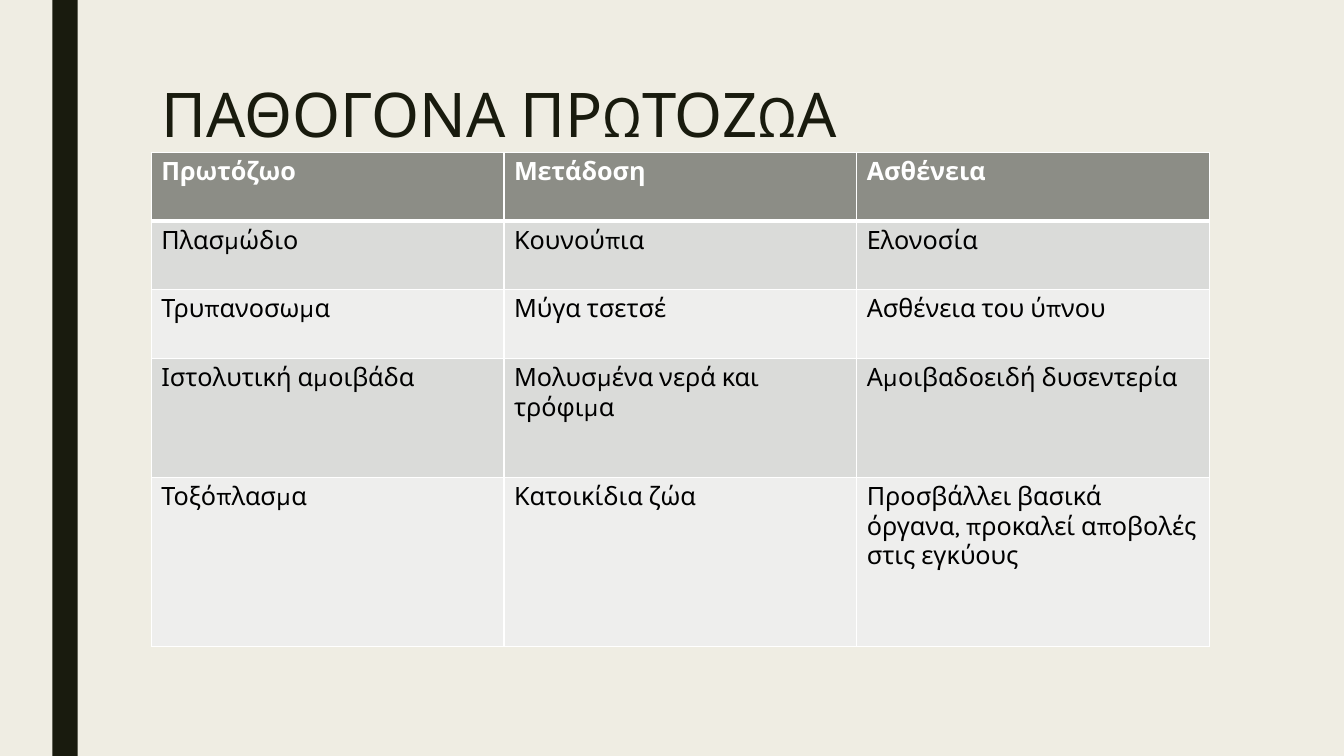
from lxml.etree import SubElement
from pptx import Presentation
from pptx.dml.color import RGBColor
from pptx.enum.shapes import MSO_SHAPE as Shape
from pptx.enum.text import MSO_ANCHOR as Anchor, MSO_AUTO_SIZE as Fit, PP_ALIGN as Align
from pptx.oxml import parse_xml
from pptx.oxml.ns import nsdecls, qn
from pptx.util import Cm, Pt

CREAM = RGBColor(0xEF, 0xED, 0xE3)
DARK = RGBColor(0x19, 0x1B, 0x0E)
WHITE = RGBColor(0xFF, 0xFF, 0xFF)
BLACK = RGBColor(0, 0, 0)
GREY = RGBColor(0x8C, 0x8D, 0x86)
BANDS = RGBColor(0xDA, 0xDB, 0xD9), RGBColor(0xEE, 0xEE, 0xED)

WIDE, HIGH = 33.87, 19.05
LEFT, SPAN = 3.81, 26.67
HEIGHTS = [1.73, 1.73, 1.73, 3, 4.27]
ROWS = [
    ["Πρωτόζωο", "Μετάδοση", "Ασθένεια"],
    ["Πλασμώδιο", "Κουνούπια", "Ελονοσία"],
    ["Τρυπανοσωμα", "Μύγα τσετσέ", "Ασθένεια του ύπνου"],
    ["Ιστολυτική αμοιβάδα", "Μολυσμένα νερά και τρόφιμα", "Αμοιβαδοειδή δυσεντερία"],
    ["Τοξόπλασμα", "Κατοικίδια ζώα",
     "Προσβάλλει βασικά όργανα, προκαλεί αποβολές στις εγκύους"],
]


def put(item, form):
    for name, value in form.items():
        setattr(item, name, value)


class Page:
    face = "Karla"

    def __init__(self, deck):
        self.slide = deck.slides.add_slide(deck.slide_layouts[5])
        fill = self.slide.background.fill
        fill.solid()
        fill.fore_color.rgb = CREAM

    def style(self, par, size, color, bold=False):
        put(par.font, {"name": self.face, "size": Pt(size), "bold": bold})
        par.font.color.rgb = color

    def bar(self, x, y, w, h):
        bar = self.slide.shapes.add_shape(Shape.RECTANGLE, Cm(x), Cm(y), Cm(w), Cm(h))
        bar.shadow.inherit = False
        bar.fill.solid()
        bar.fill.fore_color.rgb = DARK
        bar.line.fill.background()

    def title(self, text, x, y, w, h):
        box = self.slide.shapes.title
        put(box, {"left": Cm(x), "top": Cm(y), "width": Cm(w), "height": Cm(h)})
        frame = box.text_frame
        put(frame, {"text": text, "word_wrap": True, "auto_size": Fit.NONE,
                    "vertical_anchor": Anchor.MIDDLE})
        par = frame.paragraphs[0]
        put(par, {"alignment": Align.LEFT, "line_spacing": 0.89})
        self.style(par, 44, DARK)

    def edges(self, cell, widths):
        props = cell._tc.get_or_add_tcPr()
        for spot, (side, width) in enumerate(widths.items()):
            line = parse_xml(f'<a:ln{side} {nsdecls("a")} w="{Pt(width)}"/>')
            fill = SubElement(line, qn("a:solidFill"))
            SubElement(fill, qn("a:srgbClr"), val=str(WHITE))
            props.insert(spot, line)

    def table(self, rows, heights, x, y, w):
        count = len(rows[0])
        table = self.slide.shapes.add_table(
            len(rows), count, Cm(x), Cm(y), Cm(w), Cm(sum(heights))).table
        for col in table.columns:
            col.width = Cm(w / count)
        for r, (texts, height) in enumerate(zip(rows, heights)):
            table.rows[r].height = Cm(height)
            head = r == 0
            for c, text in enumerate(texts):
                cell = table.cell(r, c)
                cell.text = text
                self.style(cell.text_frame.paragraphs[0], 18, WHITE if head else BLACK, head)
                cell.fill.solid()
                cell.fill.fore_color.rgb = GREY if head else BANDS[(r - 1) % 2]
                self.edges(cell, {"L": 1, "R": 1, "T": 3 if r == 1 else 1, "B": 3 if head else 1})


def main():
    deck = Presentation()
    put(deck, {"slide_width": Cm(WIDE), "slide_height": Cm(HIGH)})
    page = Page(deck)
    # Side bar
    page.bar(1.32, 0, 0.64, HIGH)
    # Heading
    page.title("ΠΑΘΟΓΟΝΑ ΠΡΩΤΟΖΩΑ", LEFT, 1.9, SPAN, 2.13)
    # Table of protozoa
    page.table(ROWS, HEIGHTS, LEFT, 3.84, SPAN)
    deck.save("out.pptx")


if __name__ == "__main__":
    main()
